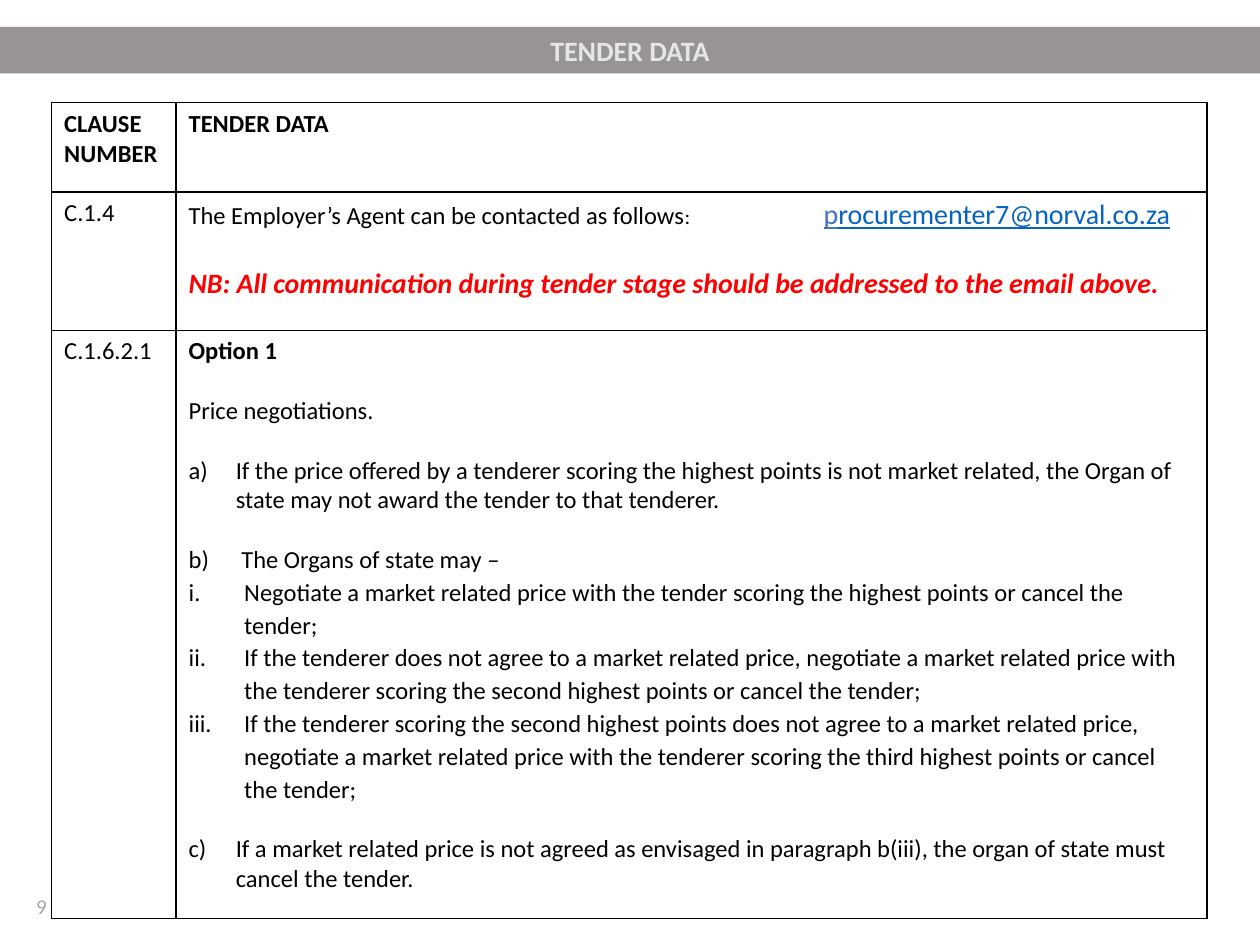
from lxml.etree import SubElement
from pptx import Presentation
from pptx.dml.color import RGBColor as Rgb
from pptx.enum.text import MSO_ANCHOR as Anchor, MSO_AUTO_SIZE as AutoSize, PP_ALIGN as Align
from pptx.oxml.ns import qn
from pptx.util import Cm, Pt

COLORS = {"band": "989494", "title": "E7E6E6", "text": "000000", "page": "A6A6A6",
          "warning": "FF0000", "link": "0563C1", "link_start": "4472C4"}
LETTERS, ROMANS = "alphaLcParenR", "romanLcPeriod"
COLUMN_WIDTHS = (2.51, 20.78)
ROW_HEIGHTS = (1.8, 2.79, 11.86)


def add_text(paragraph, text, size=14, color="text", **font_format):
    """Append a run of text with the given format."""
    run = paragraph.add_run()
    run.text = text
    run.font.name = "Calibri"
    run.font.size = Pt(size)
    run.font.color.rgb = Rgb.from_string(COLORS[color])
    for attribute, value in font_format.items():
        setattr(run.font, attribute, value)


def add_paragraph(frame, text, gap=0, **text_format):
    """Fill the empty first paragraph or append one, after a gap in points."""
    paragraph = frame.paragraphs[0]
    if paragraph.runs:
        paragraph = frame.add_paragraph()
        paragraph.space_before = Pt(gap)
    add_text(paragraph, text, **text_format)
    return paragraph


def number_item(paragraph, scheme, indent, start=None):
    """Give a paragraph automatic numbering with a hanging indent."""
    properties = paragraph._p.get_or_add_pPr()
    properties.set("marL", str(Cm(indent)))
    properties.set("indent", str(-Cm(indent)))
    numbering = SubElement(properties, qn("a:buFont"), typeface="+mj-lt").getparent()
    bullet = SubElement(numbering, qn("a:buAutoNum"), type=scheme)
    if start:
        bullet.set("startAt", str(start))


def add_item(frame, text, scheme, indent, gap=0, start=None, spacing=1.0):
    """Append a numbered list item."""
    item = add_paragraph(frame, text, gap, bold=False)
    number_item(item, scheme, indent, start)
    item.line_spacing = spacing


def style_cell(cell):
    """Draw thin black borders around an unfilled cell."""
    properties = cell._tc.get_or_add_tcPr()
    for side in ("lnL", "lnR", "lnT", "lnB"):
        border = SubElement(properties, qn(f"a:{side}"), w=str(Pt(1)))
        fill = SubElement(border, qn("a:solidFill"))
        SubElement(fill, qn("a:srgbClr"), val=COLORS["text"])
    cell.fill.background()


def add_title(slide, text):
    """Turn the title placeholder into a full-width band."""
    title = slide.shapes.title
    title.left, title.top, title.width, title.height = Cm(0), Cm(0.54), Cm(25.4), Cm(0.94)
    title.fill.solid()
    title.fill.fore_color.rgb = Rgb.from_string(COLORS["band"])
    frame = title.text_frame
    frame.auto_size = AutoSize.NONE
    frame.vertical_anchor = Anchor.MIDDLE
    add_paragraph(frame, text, size=16, color="title", bold=True).alignment = Align.CENTER


def add_page_number(slide, number):
    """Place the page number at the lower left."""
    box = slide.shapes.add_textbox(Cm(0.48), Cm(17.88), Cm(5.72), Cm(1.02))
    box.text_frame.word_wrap = True
    add_paragraph(box.text_frame, number, size=12, color="page")


def add_clause_table(slide):
    """Add the bordered clause grid and return it."""
    table = slide.shapes.add_table(len(ROW_HEIGHTS), len(COLUMN_WIDTHS), Cm(1.04), Cm(2.07),
                                   Cm(sum(COLUMN_WIDTHS)), Cm(sum(ROW_HEIGHTS))).table
    table.horz_banding = False
    for column, width in zip(table.columns, COLUMN_WIDTHS):
        column.width = Cm(width)
    for row, height in zip(table.rows, ROW_HEIGHTS):
        row.height = Cm(height)
    for cell in table.iter_cells():
        style_cell(cell)
    return table


def fill_contact(frame):
    """Write the contact clause."""
    contact = add_paragraph(frame, "The Employer’s Agent can be contacted as follows", bold=False)
    tabs = SubElement(contact._p.get_or_add_pPr(), qn("a:tabLst"))
    SubElement(tabs, qn("a:tab"), pos=str(Cm(12.8)), algn="l")
    add_text(contact, ":\t", size=12, bold=False)
    add_text(contact, "p", size=16, color="link_start", bold=False, underline=True)
    add_text(contact, "rocurementer7@norval.co.za", size=16, color="link", bold=False,
             underline=True)
    add_paragraph(frame, "NB: All communication during tender stage should be addressed to "
                  "the email above.", gap=19.5, size=16, color="warning", bold=True, italic=True)


def fill_negotiation(frame):
    """Write the price negotiation clause."""
    gap = 17
    add_paragraph(frame, "Option 1", bold=True)
    add_paragraph(frame, "Price negotiations.", gap, bold=False)
    add_item(frame, "If the price offered by a tenderer scoring the highest points is not market "
             "related, the Organ of state may not award the tender to that tenderer.",
             LETTERS, 0.95, gap)
    add_item(frame, " The Organs of state may –", LETTERS, 0.95, gap, start=2)
    for step in (
        "Negotiate a market related price with the tender scoring the highest points or cancel "
        "the tender;",
        "If the tenderer does not agree to a market related price, negotiate a market related "
        "price with the tenderer scoring the second highest points or cancel the tender;",
        "If the tenderer scoring the second highest points does not agree to a market related "
        "price, negotiate a market related price with the tenderer scoring the third highest "
        "points or cancel the tender;",
    ):
        add_item(frame, step, ROMANS, 1.12, spacing=1.1)
    add_item(frame, "If a market related price is not agreed as envisaged in paragraph b(iii), "
             "the organ of state must cancel the tender.", LETTERS, 0.95, gap, start=3)


def main():
    """Build and save the slide."""
    deck = Presentation()
    deck.slide_width, deck.slide_height = Cm(25.4), Cm(19.05)
    slide = deck.slides.add_slide(deck.slide_layouts[5])
    add_page_number(slide, "9")
    add_title(slide, "TENDER DATA")
    table = add_clause_table(slide)
    for column, heading in enumerate(("CLAUSE NUMBER", "TENDER DATA")):
        add_paragraph(table.cell(0, column).text_frame, heading, bold=True)
    for row, clause in enumerate(("C.1.4", "C.1.6.2.1"), start=1):
        add_paragraph(table.cell(row, 0).text_frame, clause, bold=False)
    fill_contact(table.cell(1, 1).text_frame)
    fill_negotiation(table.cell(2, 1).text_frame)
    deck.save("out.pptx")


if __name__ == "__main__":
    main()
